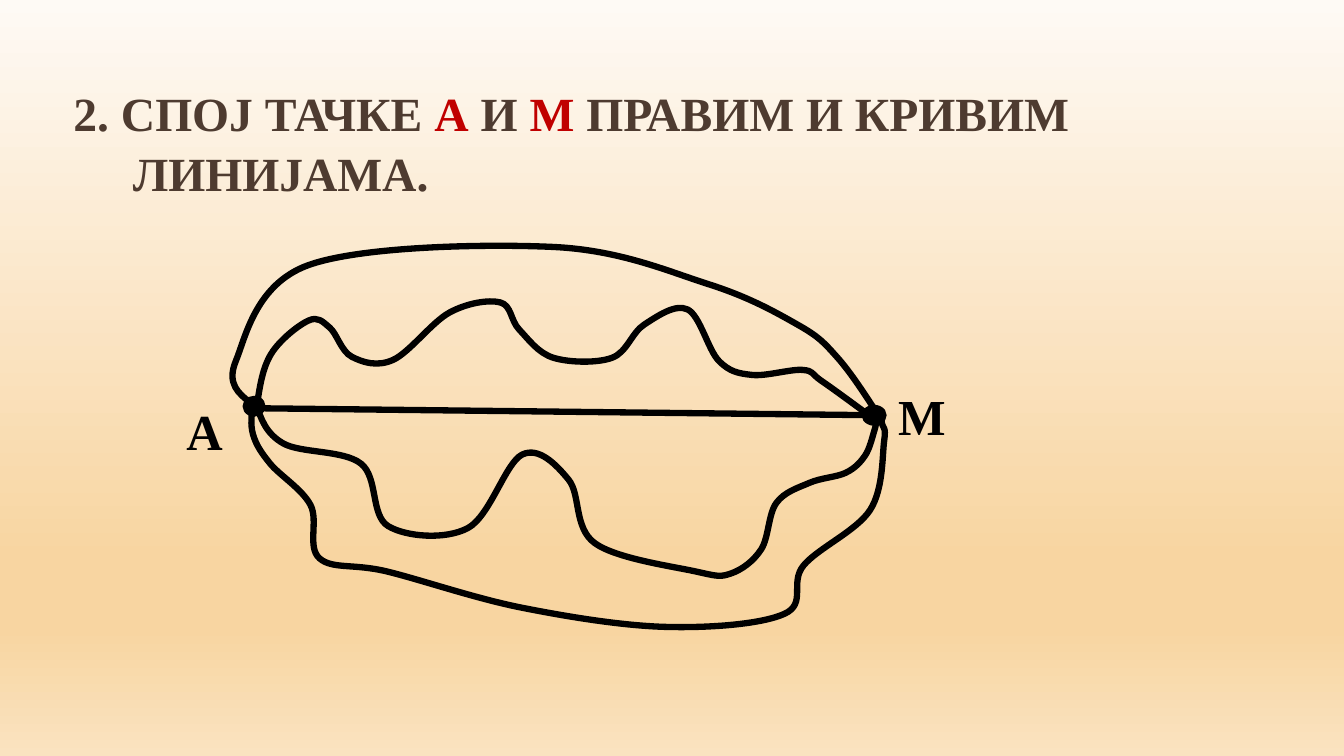
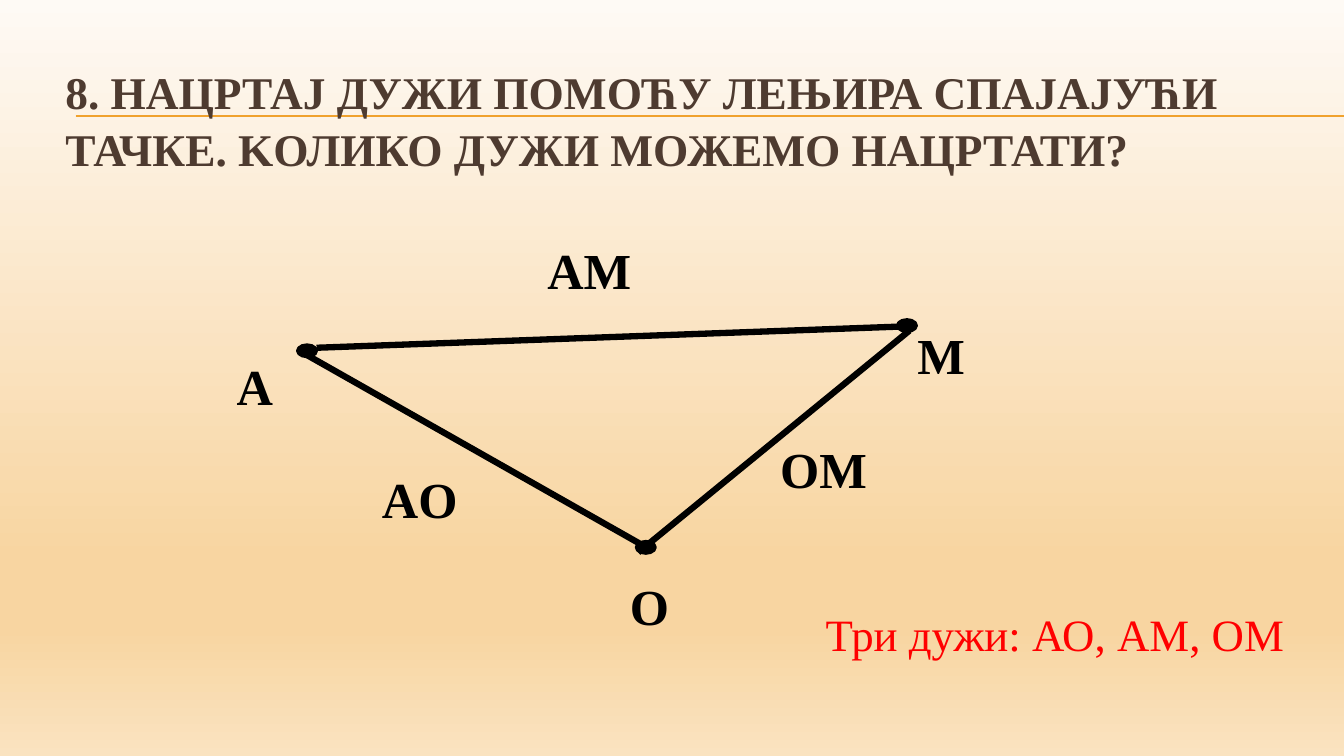
from lxml import etree
from pptx import Presentation
from pptx.dml.color import RGBColor
from pptx.enum.shapes import MSO_CONNECTOR, MSO_SHAPE
from pptx.enum.text import MSO_ANCHOR
from pptx.oxml.ns import qn
from pptx.util import Inches, Pt

STRAIGHT = MSO_CONNECTOR.STRAIGHT
OVAL = MSO_SHAPE.OVAL
TOP, MIDDLE = MSO_ANCHOR.TOP, MSO_ANCHOR.MIDDLE

FONT = "Times New Roman"
BLACK, BROWN, CRIMSON, RED, ORANGE = "000000", "4E3B30", "C00000", "FF0000", "F0A22E"
BACKGROUND_STOPS = [(0, "FEFAF5"), (74, "F8D5A1"), (83, "F8D5A1"), (100, "FAE3C0")]
STROKE = 4.5

# Points that each curve from A to M passes through
CURVES = [
    [(2.54, 4.01), (2.81, 4.4), (3.58, 4.6), (3.85, 5.22), (4.64, 5.24), (5.18, 4.51),
     (5.64, 4.76), (5.9, 5.39), (6.9, 5.67), (7.25, 5.69), (7.55, 5.45), (7.7, 4.99),
     (8.03, 4.79), (8.39, 4.69), (8.58, 4.52), (8.67, 4.28), (8.69, 4.18), (8.69, 4.13)],
    [(2.51, 4.01), (2.51, 4.31), (2.68, 4.6), (3.08, 5.01), (3.17, 5.54), (3.84, 5.67),
     (5.18, 6.03), (6.62, 6.22), (7.78, 6.09), (7.97, 5.61), (8.63, 5.06), (8.77, 4.37),
     (8.75, 4.21), (8.72, 4.09)],
    [(2.49, 4), (2.34, 3.58), (3.06, 2.63), (5.49, 2.45), (7.03, 2.82), (7.91, 3.22),
     (8.3, 3.54), (8.7, 4.1)],
    [(2.55, 4.01), (2.69, 3.51), (3.06, 3.18), (3.27, 3.25), (3.49, 3.54), (3.9, 3.57),
     (4.46, 3.1), (4.96, 3), (5.15, 3.27), (5.49, 3.55), (6.07, 3.55), (6.39, 3.22),
     (6.82, 3.07), (7.13, 3.58), (7.46, 3.72), (7.96, 3.67), (8.15, 3.78), (8.66, 4.15)],
]


def color(hex_string):
    return RGBColor.from_string(hex_string)


def set_background(master):
    fill = master.background.fill
    fill.gradient()
    fill.gradient_angle = 270
    stop_list = master.element.find(".//" + qn("a:gsLst"))
    for stop in list(stop_list):
        stop_list.remove(stop)
    for percent, hex_string in BACKGROUND_STOPS:
        stop = etree.SubElement(stop_list, qn("a:gs"), pos=str(percent * 1000))
        etree.SubElement(stop, qn("a:srgbClr"), val=hex_string)


def set_line(shape, hex_string, width):
    shape.line.color.rgb = color(hex_string)
    shape.line.width = Pt(width)


def add_line(slide, start, end, hex_string=BLACK, width=STROKE):
    ends = [Inches(value) for value in (*start, *end)]
    connector = slide.shapes.add_connector(STRAIGHT, *ends)
    set_line(connector, hex_string, width)
    etree.SubElement(connector.element.spPr, qn("a:effectLst"))


def add_dot(slide, *box):
    dot = slide.shapes.add_shape(OVAL, *map(Inches, box))
    dot.shadow.inherit = False
    dot.fill.solid()
    dot.fill.fore_color.rgb = color(BLACK)
    set_line(dot, BLACK, 2)


def spline_points(knots):
    """Return two control points and the end point for each stretch between knots."""
    def slope(index):
        before, after = knots[index - 1], knots[index + 1]
        return [(b - a) / 6 for a, b in zip(before, after)]

    def halfway(first, second):
        return tuple((a + b) / 2 for a, b in zip(first, second))

    points = []
    last = len(knots) - 1
    for index in range(last):
        start, end = knots[index], knots[index + 1]
        leave = arrive = None
        if index > 0:
            leave = tuple(p + s for p, s in zip(start, slope(index)))
        if index + 1 < last:
            arrive = tuple(p - s for p, s in zip(end, slope(index + 1)))
        points += [leave or halfway(start, arrive), arrive or halfway(leave, end), end]
    return points


def add_curve(slide, knots):
    """Draw a smooth open curve through the knots."""
    builder = slide.shapes.build_freeform(*map(Inches, knots[0]))
    builder.add_line_segments(
        [(Inches(x), Inches(y)) for x, y in spline_points(knots)], close=False)
    curve = builder.convert_to_shape()
    curve.shadow.inherit = False
    curve.fill.background()
    set_line(curve, BLACK, STROKE)
    segments = list(curve.element.iter(qn("a:lnTo")))
    outline = segments[0].getparent()
    for index in range(0, len(segments), 3):
        bezier = etree.SubElement(outline, qn("a:cubicBezTo"))
        for segment in segments[index:index + 3]:
            bezier.append(segment[0])
            outline.remove(segment)


def add_text(slide, box, runs, size, bold=True, wrap=True, anchor=TOP, spacing=1.0):
    """Add one paragraph of (text, colour) runs and return it."""
    frame = slide.shapes.add_textbox(*map(Inches, box)).text_frame
    frame.word_wrap = wrap
    frame.vertical_anchor = anchor
    paragraph = frame.paragraphs[0]
    paragraph.line_spacing = spacing
    for text, hex_string in runs:
        add_run(paragraph, text, hex_string, size, bold)
    return paragraph


def add_run(paragraph, text, hex_string, size, bold=True):
    run = paragraph.add_run()
    run.text = text
    run.font.name = FONT
    run.font.size = Pt(size)
    run.font.bold = bold
    run.font.color.rgb = color(hex_string)


def add_title(slide, box, runs, size):
    return add_text(slide, box, runs, size, anchor=MIDDLE, spacing=1.05)


def add_label(slide, text, left, top):
    width = 0.7 if len(text) == 1 else 1.17
    add_text(slide, (left, top, width, 0.5), [(text, BLACK)], 36, spacing=0.9)


def build_curves_slide(slide):
    size = 34
    title = add_title(slide, (0.63, 0.44, 11.22, 1.92), [
        ("2. СПОЈ ТАЧКЕ ", BROWN), ("А", CRIMSON), (" И ", BROWN), ("М", CRIMSON),
        (" ПРАВИМ И КРИВИМ", BROWN)], size)
    title.add_line_break()
    add_run(title, "ЛИНИЈАМА.", BROWN, size)
    hanging = Inches(0.59)
    properties = title._p.get_or_add_pPr()
    properties.set("marL", str(hanging))
    properties.set("indent", str(-hanging))

    add_dot(slide, 8.56, 4.03, 0.22, 0.18)
    add_dot(slide, 2.42, 3.94, 0.2, 0.18)
    for knots in CURVES:
        add_curve(slide, knots)
    add_line(slide, (2.54, 4.05), (8.72, 4.12))
    add_label(slide, "A", 1.75, 3.99)
    add_label(slide, "M", 8.81, 3.84)


def build_triangle_slide(slide):
    for top in (1.15, 1.16):
        add_line(slide, (0.75, top), (13.33, top), ORANGE, 0.75)
    add_title(slide, (0.55, 0.56, 12.67, 1.24), [
        ("8. НАЦРТАЈ ДУЖИ ПОМОЋУ ЛЕЊИРА СПАЈАЈУЋИ ТАЧКЕ. "
         "KОЛИКО ДУЖИ МОЖЕМО НАЦРТАТИ?", BROWN)], 32.4)

    for left, top in [(2.95, 3.42), (8.9, 3.17), (6.31, 5.37)]:
        add_dot(slide, left, top, 0.19, 0.12)
    for start, end in [((3.14, 3.45), (8.93, 3.24)), ((3.04, 3.52), (6.34, 5.39)),
                       ((6.33, 5.48), (9.02, 3.28))]:
        add_line(slide, start, end)
    for text, left, top in [("A", 2.25, 3.54), ("M", 9, 3.23), ("О", 6.15, 5.72),
                            ("AМ", 5.33, 2.39), ("AО", 3.69, 4.66), ("ОМ", 7.64, 4.37)]:
        add_label(slide, text, left, top)
    add_text(slide, (8.09, 5.97, 4.79, 0.64), [("Три дужи: АО, АМ, ОМ", RED)], 32,
             bold=False, wrap=False)


def main():
    presentation = Presentation()
    presentation.slide_width = Inches(13.33)
    presentation.slide_height = Inches(7.5)
    set_background(presentation.slide_master)
    blank = presentation.slide_layouts[6]
    for build in (build_curves_slide, build_triangle_slide):
        build(presentation.slides.add_slide(blank))
    presentation.save("out.pptx")


if __name__ == "__main__":
    main()
